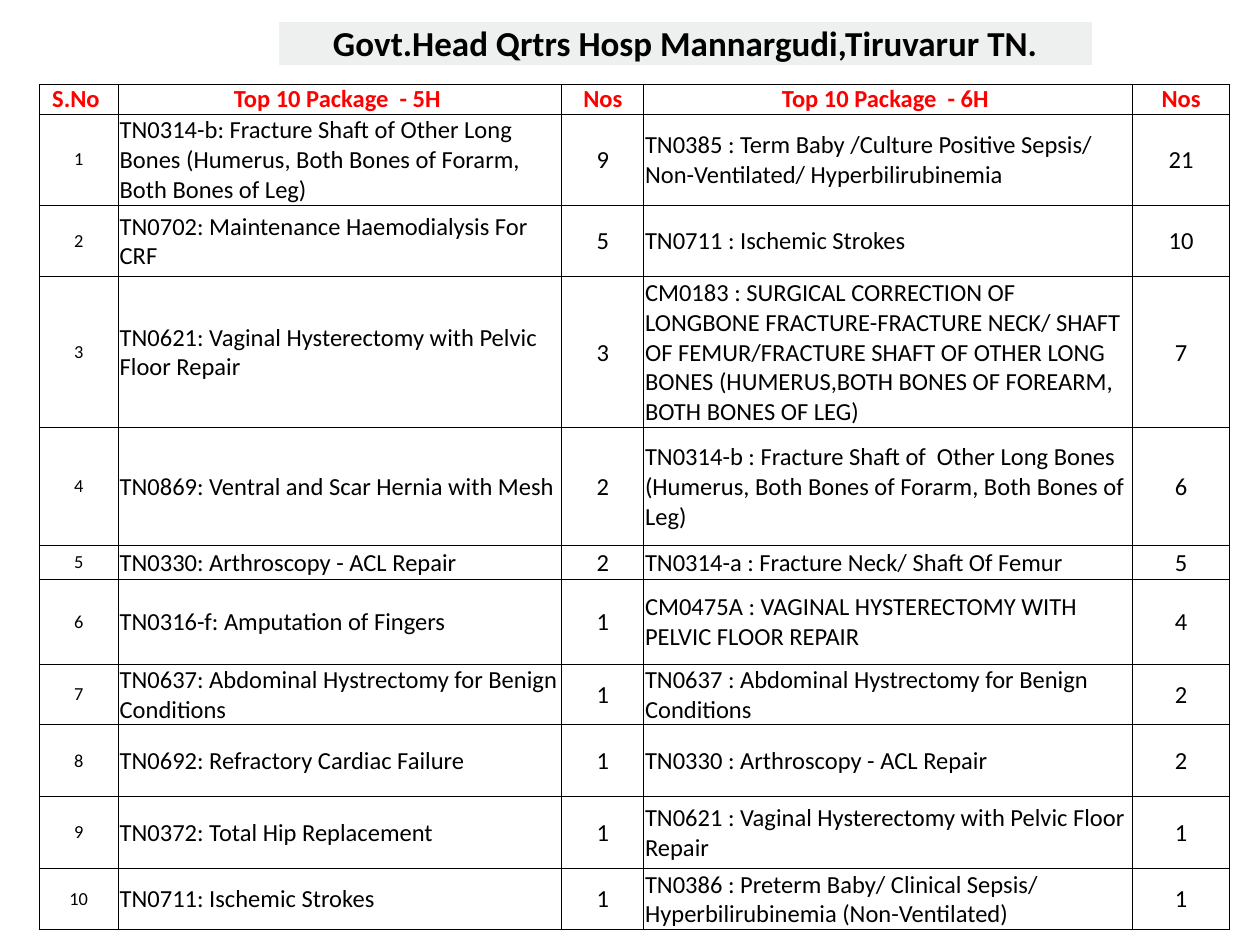
import dataclasses

import lxml.etree
import pptx
import pptx.dml.color
import pptx.enum.text
import pptx.oxml.ns
import pptx.util

Inches = pptx.util.Inches
CENTER = pptx.enum.text.PP_ALIGN.CENTER
LEFT = pptx.enum.text.PP_ALIGN.LEFT
MIDDLE = pptx.enum.text.MSO_ANCHOR.MIDDLE
BOTTOM = pptx.enum.text.MSO_ANCHOR.BOTTOM


@dataclasses.dataclass(frozen=True)
class Theme:
    font: str = "Calibri"
    text: str = "000000"
    heading: str = "FF0000"
    paper: str = "FFFFFF"
    title_fill: str = "EEF0EF"
    title_size: float = 20
    body_size: float = 14
    serial_size: float = 10.5
    grid_width: float = 0.5
    title_width: float = 1


class SlideBuilder:
    def __init__(self, prs, theme):
        self.theme = theme
        self.slide = prs.slides.add_slide(prs.slide_layouts[6])

    def table(self, left, top, widths, heights):
        """Add an unstyled table whose size follows from its columns and rows."""
        frame = self.slide.shapes.add_table(
            len(heights), len(widths), Inches(left), Inches(top),
            Inches(sum(widths)), Inches(sum(heights)))
        tbl = frame.table
        tbl.first_row = tbl.horz_banding = False
        for column, width in zip(tbl.columns, widths):
            column.width = Inches(width)
        for row, height in zip(tbl.rows, heights):
            row.height = Inches(height)
        return tbl

    def border(self, cell, color, width):
        tc_pr = cell._tc.get_or_add_tcPr()
        qn = pptx.oxml.ns.qn
        for side in ("lnL", "lnR", "lnT", "lnB"):
            ln = lxml.etree.SubElement(
                tc_pr, qn(f"a:{side}"), w=str(pptx.util.Pt(width)))
            fill = lxml.etree.SubElement(ln, qn("a:solidFill"))
            lxml.etree.SubElement(fill, qn("a:srgbClr"), val=color)

    def cell(self, cell, text, size, color=None, bold=False, align=CENTER,
             anchor=MIDDLE, inset=0.01, fill=None, line=None, line_width=None):
        theme = self.theme
        self.border(cell, line or theme.text, line_width or theme.grid_width)
        cell.fill.solid()
        cell.fill.fore_color.rgb = pptx.dml.color.RGBColor.from_string(
            fill or theme.paper)
        layout = {
            "vertical_anchor": anchor,
            "margin_left": Inches(inset),
            "margin_right": Inches(inset),
            "margin_top": Inches(inset),
            "margin_bottom": 0,
        }
        for name, value in layout.items():
            setattr(cell, name, value)
        p = cell.text_frame.paragraphs[0]
        p.alignment = align
        r = p.add_run()
        r.text = text
        style = {"name": theme.font, "size": pptx.util.Pt(size), "bold": bold}
        for name, value in style.items():
            setattr(r.font, name, value)
        r.font.color.rgb = pptx.dml.color.RGBColor.from_string(
            color or theme.text)

    def title(self, text):
        theme = self.theme
        tbl = self.table(2.21, 0.17, [6.46], [0.34])
        self.cell(tbl.cell(0, 0), text, theme.title_size, bold=True,
                  anchor=BOTTOM, fill=theme.title_fill, line=theme.paper,
                  line_width=theme.title_width)

    def package_table(self, headings, packages):
        theme = self.theme
        tbl = self.table(0.31, 0.67, COLUMN_WIDTHS, ROW_HEIGHTS)
        for col, heading in enumerate(headings):
            self.cell(tbl.cell(0, col), heading, theme.body_size,
                      color=theme.heading, bold=True, inset=0)
        for row, package in enumerate(packages, 1):
            self.cell(tbl.cell(row, 0), str(row), theme.serial_size, inset=0)
            for col, value in enumerate(package, 1):
                align = LEFT if isinstance(value, str) else CENTER
                self.cell(tbl.cell(row, col), str(value), theme.body_size,
                          align=align)


COLUMN_WIDTHS = [0.63, 3.52, 0.65, 3.88, 0.77]
ROW_HEIGHTS = [0.23, 0.69, 0.57, 1.15, 0.94, 0.27, 0.67, 0.47, 0.57, 0.57, 0.47]
HEADINGS = ["S.No ", "Top 10 Package  - 5H ", "Nos",
            "Top 10 Package  - 6H ", "Nos"]
PACKAGES = [
    ("TN0314-b: Fracture Shaft of Other Long Bones (Humerus, Both Bones of "
     "Forarm, Both Bones of Leg)", 9,
     "TN0385 : Term Baby /Culture Positive Sepsis/ Non-Ventilated/ "
     "Hyperbilirubinemia", 21),
    ("TN0702: Maintenance Haemodialysis For CRF", 5,
     "TN0711 : Ischemic Strokes", 10),
    ("TN0621: Vaginal Hysterectomy with Pelvic Floor Repair", 3,
     "CM0183 : SURGICAL CORRECTION OF LONGBONE FRACTURE-FRACTURE NECK/ SHAFT "
     "OF FEMUR/FRACTURE SHAFT OF OTHER LONG BONES (HUMERUS,BOTH BONES OF "
     "FOREARM, BOTH BONES OF LEG)", 7),
    ("TN0869: Ventral and Scar Hernia with Mesh", 2,
     "TN0314-b : Fracture Shaft of  Other Long Bones (Humerus, Both Bones of "
     "Forarm, Both Bones of Leg)", 6),
    ("TN0330: Arthroscopy - ACL Repair", 2,
     "TN0314-a : Fracture Neck/ Shaft Of Femur", 5),
    ("TN0316-f: Amputation of Fingers", 1,
     "CM0475A : VAGINAL HYSTERECTOMY WITH PELVIC FLOOR REPAIR", 4),
    ("TN0637: Abdominal Hystrectomy for Benign Conditions", 1,
     "TN0637 : Abdominal Hystrectomy for Benign Conditions", 2),
    ("TN0692: Refractory Cardiac Failure", 1,
     "TN0330 : Arthroscopy - ACL Repair", 2),
    ("TN0372: Total Hip Replacement", 1,
     "TN0621 : Vaginal Hysterectomy with Pelvic Floor Repair", 1),
    ("TN0711: Ischemic Strokes", 1,
     "TN0386 : Preterm Baby/ Clinical Sepsis/ Hyperbilirubinemia "
     "(Non-Ventilated)", 1),
]


def main():
    prs = pptx.Presentation()
    prs.slide_width, prs.slide_height = Inches(10), Inches(7.5)
    s = SlideBuilder(prs, Theme())
    s.title("Govt.Head Qrtrs Hosp Mannargudi,Tiruvarur TN.")
    s.package_table(HEADINGS, PACKAGES)
    prs.save("out.pptx")


if __name__ == "__main__":
    main()
